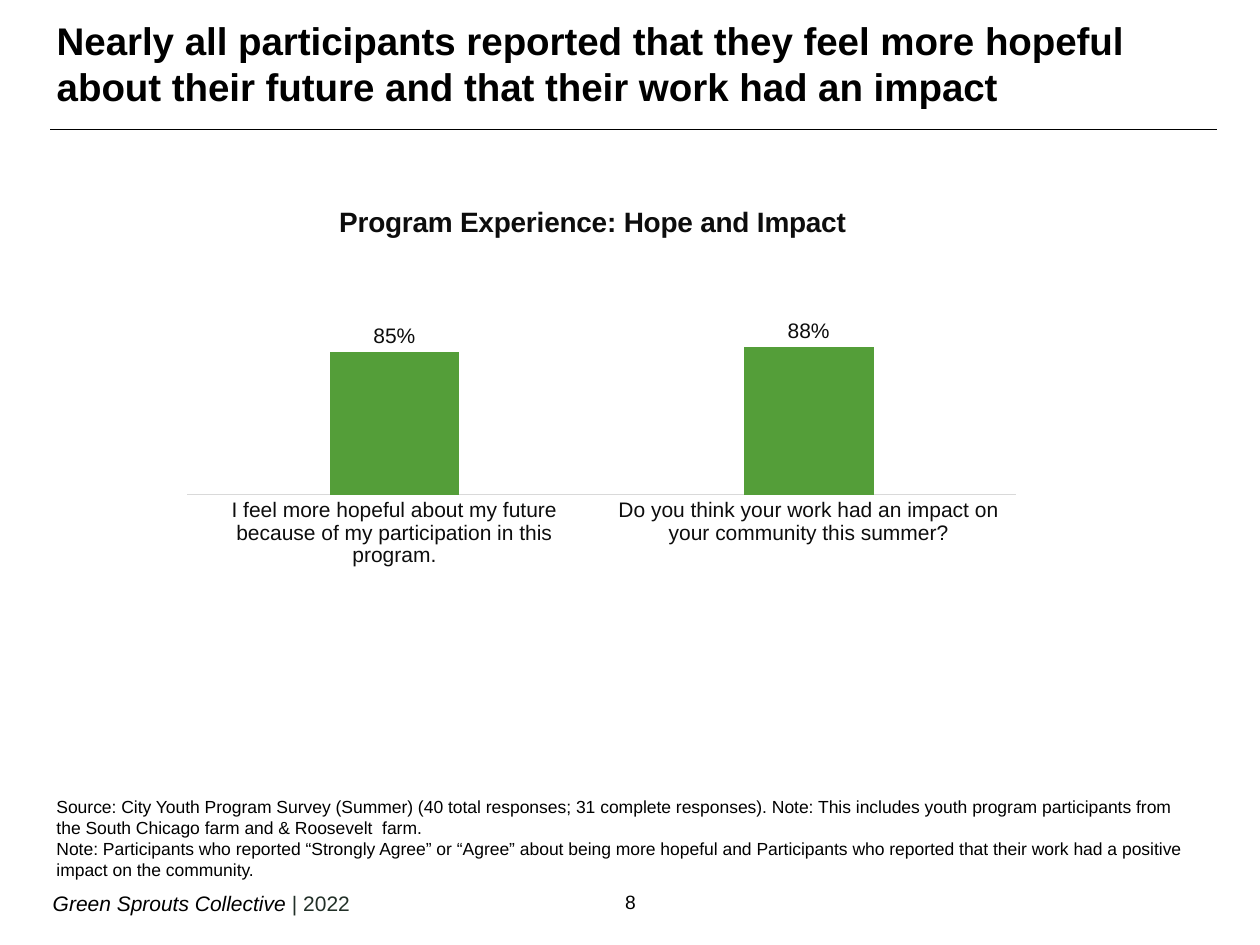
from dataclasses import dataclass

from lxml import etree
from pptx import Presentation
from pptx import util as u
from pptx.chart import data as chart_data
from pptx.dml import color
from pptx.enum import chart as charts, shapes, text
from pptx.oxml import ns, parse_xml


@dataclass(frozen=True)
class Theme:
    font: str = "Arial"
    black: str = "000000"
    footer: str = "223028"
    label: str = "0D0D0D"
    axis: str = "D9D9D9"
    bar: str = "549E39"
    title_size: float = 22
    chart_title_size: float = 16
    label_size: float = 12
    page_size: float = 11
    note_size: float = 10


THEME = Theme()


def rgb(value):
    return color.RGBColor.from_string(value)


def style_font(font, size, value, bold=False, italic=False):
    font.name = THEME.font
    font.size = u.Pt(size)
    font.bold = bold
    font.italic = italic
    font.color.rgb = rgb(value)


def place(shape, left, top, width, height):
    shape.left, shape.top = u.Inches(left), u.Inches(top)
    shape.width, shape.height = u.Inches(width), u.Inches(height)


def set_title(slide, words):
    title = slide.shapes.title
    place(title, 0.35, 0, 9.26, 1)
    frame = title.text_frame
    frame.text = words
    frame.auto_size = text.MSO_AUTO_SIZE.NONE
    frame.vertical_anchor = text.MSO_ANCHOR.MIDDLE
    paragraph = frame.paragraphs[0]
    paragraph.alignment = text.PP_ALIGN.LEFT
    style_font(paragraph.runs[0].font, THEME.title_size, THEME.black, bold=True)


def add_rule(slide, left, right, top):
    rule = slide.shapes.add_connector(
        shapes.MSO_CONNECTOR.STRAIGHT,
        u.Inches(left), u.Inches(top), u.Inches(right), u.Inches(top),
    )
    rule.line.color.rgb = rgb(THEME.black)
    rule.line.width = u.Pt(0.75)
    etree.SubElement(rule._element.spPr, ns.qn("a:effectLst"))


def add_text(slide, box, words, size, alignment=text.PP_ALIGN.LEFT):
    shape = slide.shapes.add_textbox(*(u.Inches(length) for length in box))
    frame = shape.text_frame
    frame.word_wrap = True
    frame.text = words
    for paragraph in frame.paragraphs:
        paragraph.alignment = alignment
        style_font(paragraph.runs[0].font, size, THEME.black)
    return shape


def add_footer(slide, organization, year):
    shape = add_text(slide, (0.32, 7.02, 4.59, 0.3), organization, THEME.label_size)
    paragraph = shape.text_frame.paragraphs[0]
    paragraph.runs[0].font.italic = True
    run = paragraph.add_run()
    run.text = year
    style_font(run.font, THEME.label_size, THEME.footer)


def set_layout(parent, position, x, y, width=None, height=None, inner=False):
    target = '<c:layoutTarget val="inner"/>' if inner else ""
    sizes = f'<c:w val="{width}"/><c:h val="{height}"/>' if width else ""
    layout = parse_xml(
        f'<c:layout {ns.nsdecls("c")}><c:manualLayout>{target}'
        '<c:xMode val="edge"/><c:yMode val="edge"/>'
        f'<c:x val="{x}"/><c:y val="{y}"/>{sizes}</c:manualLayout></c:layout>'
    )
    for old in parent.findall(ns.qn("c:layout")):
        parent.remove(old)
    parent.insert(position, layout)


def format_axes(chart):
    values = chart.value_axis
    values.minimum_scale, values.maximum_scale = 0, 1
    values.has_major_gridlines = False
    values.visible = False
    categories = chart.category_axis
    categories.major_tick_mark = charts.XL_TICK_MARK.NONE
    categories.format.line.color.rgb = rgb(THEME.axis)
    categories.format.line.width = u.Pt(0.75)
    style_font(categories.tick_labels.font, THEME.label_size, THEME.label)


def format_bars(plot):
    plot.gap_width, plot.overlap = 219, -27
    plot.vary_by_categories = False
    fill = plot.series[0].format.fill
    fill.solid()
    fill.fore_color.rgb = rgb(THEME.bar)
    plot.has_data_labels = True
    labels = plot.data_labels
    labels.show_value = True
    labels.number_format, labels.number_format_is_linked = "0%", False
    labels.position = charts.XL_LABEL_POSITION.OUTSIDE_END
    style_font(labels.font, THEME.label_size, THEME.label)


def add_bar_chart(slide, box, title, shares):
    data = chart_data.CategoryChartData(number_format="0%")
    data.categories = list(shares)
    data.add_series("Series 1", list(shares.values()))
    chart = slide.shapes.add_chart(
        charts.XL_CHART_TYPE.COLUMN_CLUSTERED,
        *(u.Inches(length) for length in box), data,
    ).chart
    style_font(chart.font, THEME.label_size, THEME.label)
    chart.has_legend = False
    chart.has_title = True
    frame = chart.chart_title.text_frame
    frame.text = title
    style_font(frame.paragraphs[0].runs[0].font, THEME.chart_title_size, THEME.label, bold=True)
    chart.chart_title.include_in_layout = False
    set_layout(chart.chart_title._element, 1, 0.19, 0.08)
    set_layout(chart._chartSpace.chart.plotArea, 0, 0.02, 0.4, 0.96, 0.42, inner=True)
    format_axes(chart)
    format_bars(chart.plots[0])


def main():
    presentation = Presentation()
    presentation.slide_width, presentation.slide_height = u.Inches(10), u.Inches(7.5)
    slide = presentation.slides.add_slide(presentation.slide_layouts.get_by_name("Title Only"))
    add_rule(slide, 0.4, 9.66, 1.03)
    add_footer(slide, "Green Sprouts Collective ", "| 2022")
    add_text(slide, (4.67, 7.02, 0.67, 0.29), "8", THEME.page_size, text.PP_ALIGN.CENTER)
    set_title(
        slide,
        "Nearly all participants reported that they feel more hopeful about their future "
        "and that their work had an impact",
    )
    add_text(
        slide, (0.35, 6.27, 9.13, 0.94),
        "Source: City Youth Program Survey (Summer) (40 total responses; 31 complete responses). "
        "Note: This includes youth program participants from the South Chicago farm and "
        "& Roosevelt  farm.\n"
        "Note: Participants who reported “Strongly Agree” or “Agree” about being more hopeful "
        "and Participants who reported that their work had a positive impact on the community.",
        THEME.note_size,
    )
    add_bar_chart(
        slide, (1.35, 1.33, 6.85, 3.17), "Program Experience: Hope and Impact",
        {
            "I feel more hopeful about my future because of my participation in this program.": 0.85,
            "Do you think your work had an impact on your community this summer?": 0.88,
        },
    )
    presentation.save("out.pptx")


if __name__ == "__main__":
    main()
